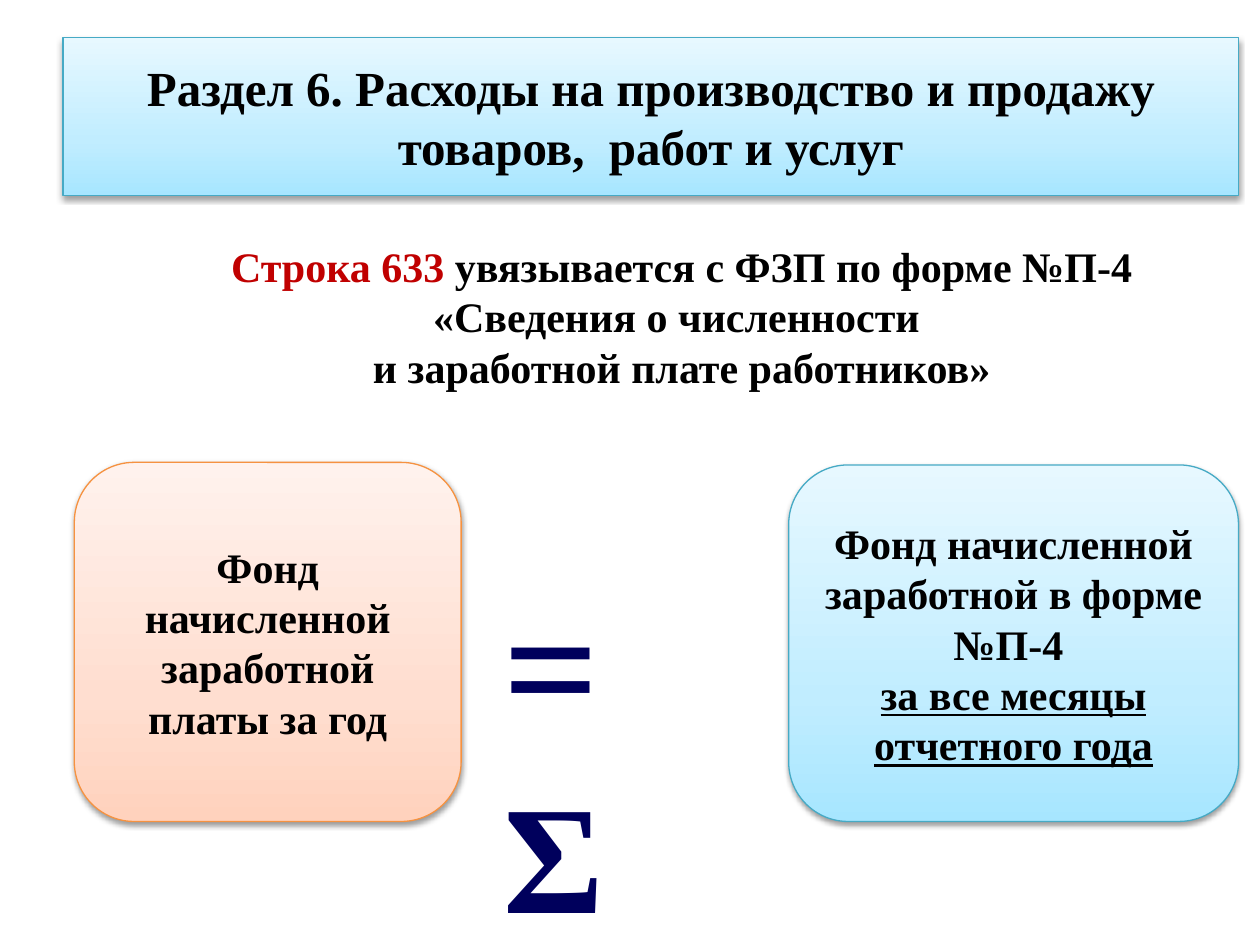
from copy import deepcopy
from dataclasses import dataclass

from lxml.etree import SubElement
from pptx import Presentation
from pptx.dml.color import RGBColor
from pptx.enum.shapes import MSO_SHAPE
from pptx.enum.text import MSO_ANCHOR, PP_ALIGN
from pptx.oxml.ns import qn
from pptx.util import Inches, Pt

WIDTH, HEIGHT = Inches(10), Inches(7.5)
FONT = "Times New Roman"
COLORS = {"black": "000000", "red": "C00000", "navy": "00005C",
          "blue line": "46AAC5", "orange line": "F69240"}
GRADIENTS = {
    "blue": ((0, "A7E6FF"), (0.35, "C1EDFF"), (1, "E7F8FF")),
    "orange": ((0, "FFD2BD"), (0.35, "FFDED0"), (1, "FFF2ED")),
}


@dataclass(frozen=True)
class Region:
    """Place on the slide, in percent of its width and height."""
    left: float
    top: float
    width: float
    height: float

    def lengths(self) -> tuple:
        return (int(WIDTH * self.left / 100), int(HEIGHT * self.top / 100),
                int(WIDTH * self.width / 100), int(HEIGHT * self.height / 100))


@dataclass(frozen=True)
class Words:
    text: str
    size: float = 24
    color: str = "black"
    underline: bool = False


@dataclass(frozen=True)
class Card:
    region: Region
    theme: str
    paragraphs: tuple


def write(shape, paragraphs: tuple, align=PP_ALIGN.CENTER,
          anchor=MSO_ANCHOR.MIDDLE) -> None:
    frame = shape.text_frame
    frame.word_wrap = True
    frame.vertical_anchor = anchor
    for index, runs in enumerate(paragraphs):
        para = frame.add_paragraph() if index else frame.paragraphs[0]
        para.alignment = align
        for words in runs:
            span = para.add_run()
            span.text = words.text
            font = span.font
            font.name, font.size, font.bold = FONT, Pt(words.size), True
            font.color.rgb = RGBColor.from_string(COLORS[words.color])
            if words.underline:
                font.underline = True


def decorate(shape, theme: str) -> None:
    """Give a panel its three-stop gradient, thin outline and soft shadow."""
    fill = shape.fill
    fill.gradient()
    fill.gradient_angle = 90
    stop_list = shape._element.spPr.find(qn("a:gradFill")).find(qn("a:gsLst"))
    stop_list.insert(1, deepcopy(stop_list[0]))
    for stop, (position, color) in zip(fill.gradient_stops, GRADIENTS[theme]):
        stop.position = position
        stop.color.rgb = RGBColor.from_string(color)
    shape.line.color.rgb = RGBColor.from_string(COLORS[f"{theme} line"])
    shape.line.width = Pt(0.75)
    shape.shadow.inherit = False
    effects = shape._element.spPr.find(qn("a:effectLst"))
    shadow = SubElement(effects, qn("a:outerShdw"), blurRad="40000",
                        dist="20000", dir="5400000", rotWithShape="0")
    tint = SubElement(shadow, qn("a:srgbClr"), val=COLORS["black"])
    SubElement(tint, qn("a:alpha"), val="38000")


def add_title(page, region: Region, text: str) -> None:
    title = page.shapes.title
    title.left, title.top, title.width, title.height = region.lengths()
    decorate(title, "blue")
    write(title, ((Words(text, 28),),))


def add_card(page, card: Card) -> None:
    box = page.shapes.add_shape(MSO_SHAPE.ROUNDED_RECTANGLE,
                                *card.region.lengths())
    decorate(box, card.theme)
    write(box, card.paragraphs)


def add_text(page, region: Region, paragraphs: tuple, align) -> None:
    box = page.shapes.add_textbox(*region.lengths())
    write(box, paragraphs, align, MSO_ANCHOR.TOP)


CARDS = (
    Card(Region(5.9, 48.93, 30.7, 38), "orange",
         ((Words("Фонд начисленной заработной платы за год"),),)),
    Card(Region(62.6, 49.2, 35.7, 37.73), "blue",
         ((Words("Фонд начисленной заработной в форме №П-4 "),),
          (Words("за все месяцы отчетного года", underline=True),))),
)


def main() -> None:
    deck = Presentation()
    deck.slide_width, deck.slide_height = WIDTH, HEIGHT
    page = deck.slides.add_slide(deck.slide_layouts[5])

    # Heading
    add_title(page, Region(5, 4, 93.3, 16.67),
              "Раздел 6. Расходы на производство и продажу "
              "товаров,  работ и услуг")

    # Two sides of the equation
    for card in CARDS:
        add_card(page, card)

    # Equals and sum signs between the cards
    add_text(page, Region(39, 58.4, 20.9, 22.93),
             ((Words("=", 96, "navy"), Words("   ", 40, "navy"),
               Words("Σ", 88, "navy")),), PP_ALIGN.LEFT)

    # Rule for the line
    add_text(page, Region(11.7, 24.8, 84.8, 17.47),
             ((Words("Строка 633 ", color="red"),
               Words("увязывается с ФЗП по форме №П-4 «Сведения о численности ")),
              (Words("и заработной плате работников»"),)), PP_ALIGN.CENTER)

    deck.save("out.pptx")


if __name__ == "__main__":
    main()
